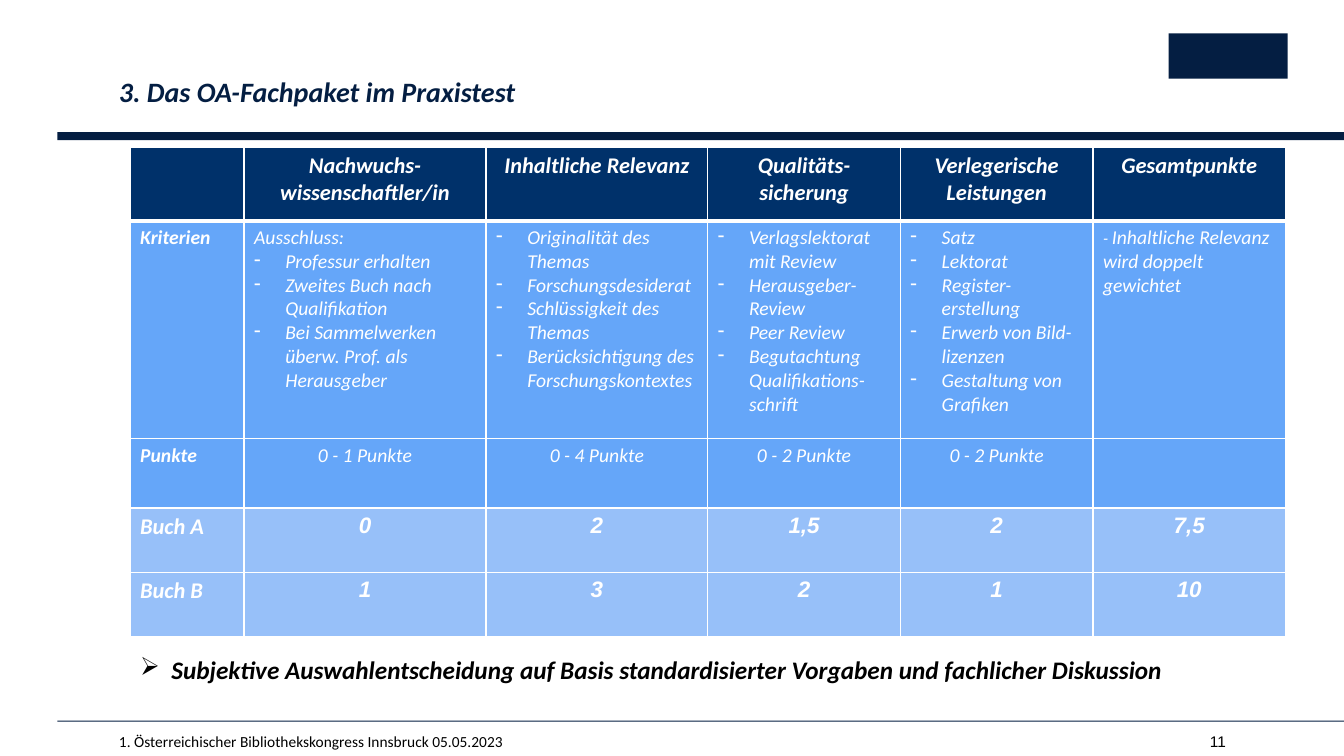
"""Builds the slide on the open access subject package in practice."""
from pptx import Presentation
from pptx.dml.color import RGBColor
from pptx.enum.shapes import MSO_SHAPE
from pptx.enum.text import MSO_ANCHOR, MSO_AUTO_SIZE, PP_ALIGN
from pptx.oxml import parse_xml
from pptx.oxml.ns import nsdecls
from pptx.util import Inches, Pt

LEFT, CENTER, RIGHT = PP_ALIGN.LEFT, PP_ALIGN.CENTER, PP_ALIGN.RIGHT
TOP = MSO_ANCHOR.TOP
NO_FIT = MSO_AUTO_SIZE.NONE
RECTANGLE = MSO_SHAPE.RECTANGLE
TITLE_ONLY = 5

THEME = {
    "navy": "041E42", "header": "00316A", "criteria": "65A6F9",
    "books": "97C0F9", "white": "FFFFFF", "black": "000000",
    "title": dict(name="Calibri", size=Pt(20), bold=True, italic=True),
    "closing": dict(name="Calibri", size=Pt(18), bold=True, italic=True),
    "heading": dict(name="Calibri", size=Pt(16), bold=True, italic=True),
    "score": dict(name="Arial", size=Pt(16), bold=True, italic=True),
    "label": dict(name="Calibri", size=Pt(14), bold=True, italic=True),
    "body": dict(name="Calibri", size=Pt(14), bold=False, italic=True),
    "dash": dict(name="Calibri", size=Pt(12), bold=False, italic=True),
    "footer": dict(name="Calibri", size=Pt(11), bold=False, italic=False),
    "number": dict(name="Arial", size=Pt(11), bold=False, italic=False),
}


def write(para, text, style, color, align=LEFT, bullet=None):
    """Adds a formatted span to a paragraph, with a hanging bullet if given."""
    para.alignment = align
    span = para.add_run()
    span.text = text
    for name, value in THEME[style].items():
        setattr(span.font, name, value)
    span.font.color.rgb = RGBColor.from_string(THEME[color])
    if bullet:
        props = para._p.get_or_add_pPr()
        props.set("marL", str(Inches(0.31)))
        props.set("indent", str(-Inches(0.31)))
        props.append(parse_xml(f'<a:buChar {nsdecls("a")} char="{bullet}"/>'))


def add_box(slide, place, margin, wrap=True):
    """Adds a text box with one margin all round and returns its first paragraph."""
    frame = slide.shapes.add_textbox(*map(Inches, place)).text_frame
    frame.word_wrap = wrap
    for side in ("left", "top", "right", "bottom"):
        setattr(frame, f"margin_{side}", Inches(margin))
    return frame.paragraphs[0]


deck = Presentation()
deck.slide_width, deck.slide_height = Inches(13.33), Inches(7.5)
page = deck.slides.add_slide(deck.slide_layouts[TITLE_ONLY])

for place in ((0.57, 1.31, 12.76, 0.08), (0.57, 7.15, 12.76, 0.01), (11.59, 0.33, 1.18, 0.45)):
    bar = page.shapes.add_shape(RECTANGLE, *map(Inches, place))
    bar.shadow.inherit = False
    bar.fill.solid()
    bar.fill.fore_color.rgb = RGBColor.from_string(THEME["navy"])
    bar.line.fill.background()

title = page.shapes.title
placement = dict(left=1.18, top=0.71, width=9.69, height=0.37)
for name, value in placement.items():
    setattr(title, name, Inches(value))
title_format = dict(margin_left=0, margin_top=0, margin_right=Inches(0.39), margin_bottom=0,
                    vertical_anchor=TOP, auto_size=NO_FIT, word_wrap=True)
for name, value in title_format.items():
    setattr(title.text_frame, name, value)
title_para = title.text_frame.paragraphs[0]
title_para.line_spacing = 1.1
write(title_para, "3. Das OA-Fachpaket im Praxistest", "title", "navy")

headings = ["", "Nachwuchs-wissenschaftler/in", "Inhaltliche Relevanz",
            "Qualitäts-sicherung", "Verlegerische Leistungen", "Gesamtpunkte"]
criteria = [
    ["Professur erhalten", "Zweites Buch nach Qualifikation",
     "Bei Sammelwerken überw. Prof. als Herausgeber"],
    ["Originalität des Themas", "Forschungsdesiderat", "Schlüssigkeit des Themas",
     "Berücksichtigung des Forschungskontextes"],
    ["Verlagslektorat mit Review", "Herausgeber-Review", "Peer Review",
     "Begutachtung Qualifikations-schrift"],
    ["Satz", "Lektorat", "Register-erstellung", "Erwerb von Bild-lizenzen",
     "Gestaltung von Grafiken"],
]
rows = [
    (0.73, "header", "heading", "heading", headings),
    (2.16, "criteria", "label", "body", ["Kriterien", "Ausschluss:", "", "", "", ""]),
    (0.69, "criteria", "label", "body",
     ["Punkte", "0 - 1 Punkte", "0 - 4 Punkte", "0 - 2 Punkte", "0 - 2 Punkte", ""]),
    (0.64, "books", "heading", "score", ["Buch A", "0", "2", "1,5", "2", "7,5"]),
    (0.64, "books", "heading", "score", ["Buch B", "1", "3", "2", "1", "10"]),
]
widths = [1.13, 2.4, 2.2, 1.91, 1.91, 1.91]
CRITERIA_ROW = 1

table = page.shapes.add_table(len(rows), len(widths), Inches(1.29), Inches(1.46),
                              Inches(sum(widths)), Inches(4.86)).table
for column, width in zip(table.columns, widths):
    column.width = Inches(width)

for r, (height, fill, label_style, value_style, texts) in enumerate(rows):
    table.rows[r].height = Inches(height)
    for c, text in enumerate(texts):
        cell = table.cell(r, c)
        weights = {"L": 1, "R": 1, "T": 3 if r == 1 else 1, "B": 3 if r == 0 else 1}
        for side, weight in weights.items():
            cell._tc.get_or_add_tcPr().append(parse_xml(
                f'<a:ln{side} {nsdecls("a")} w="{Pt(weight)}"><a:solidFill>'
                f'<a:srgbClr val="{THEME["white"]}"/></a:solidFill></a:ln{side}>'))
        cell.fill.solid()
        cell.fill.fore_color.rgb = RGBColor.from_string(THEME[fill])
        if text:
            style = value_style if c else label_style
            align = CENTER if c and r != CRITERIA_ROW else LEFT
            write(cell.text_frame.paragraphs[0], text, style, "white", align)

for c, items in enumerate(criteria, start=1):
    frame = table.cell(CRITERIA_ROW, c).text_frame
    for item in items:
        para = frame.add_paragraph() if frame.text else frame.paragraphs[0]
        write(para, item, "body", "white", bullet="-")

total_para = table.cell(CRITERIA_ROW, 5).text_frame.paragraphs[0]
write(total_para, "- ", "dash", "white")
write(total_para, "Inhaltliche Relevanz wird doppelt gewichtet", "body", "white")

closing = add_box(page, (1.29, 6.44, 10.87, 0.4), 0.05)
closing._p.getparent().bodyPr.set("lIns", str(Inches(0.1)))
write(closing, "Subjektive Auswahlentscheidung auf Basis standardisierter Vorgaben "
      "und fachlicher Diskussion", "closing", "black", bullet="➢")

footer = add_box(page, (1.18, 7.26, 5.38, 0.19), 0)
write(footer, "1. Österreichischer Bibliothekskongress Innsbruck 05.05.2023", "footer", "black")
number = add_box(page, (11.99, 7.26, 0.17, 0.19), 0, wrap=False)
write(number, "11", "number", "black", RIGHT)

deck.save("out.pptx")
